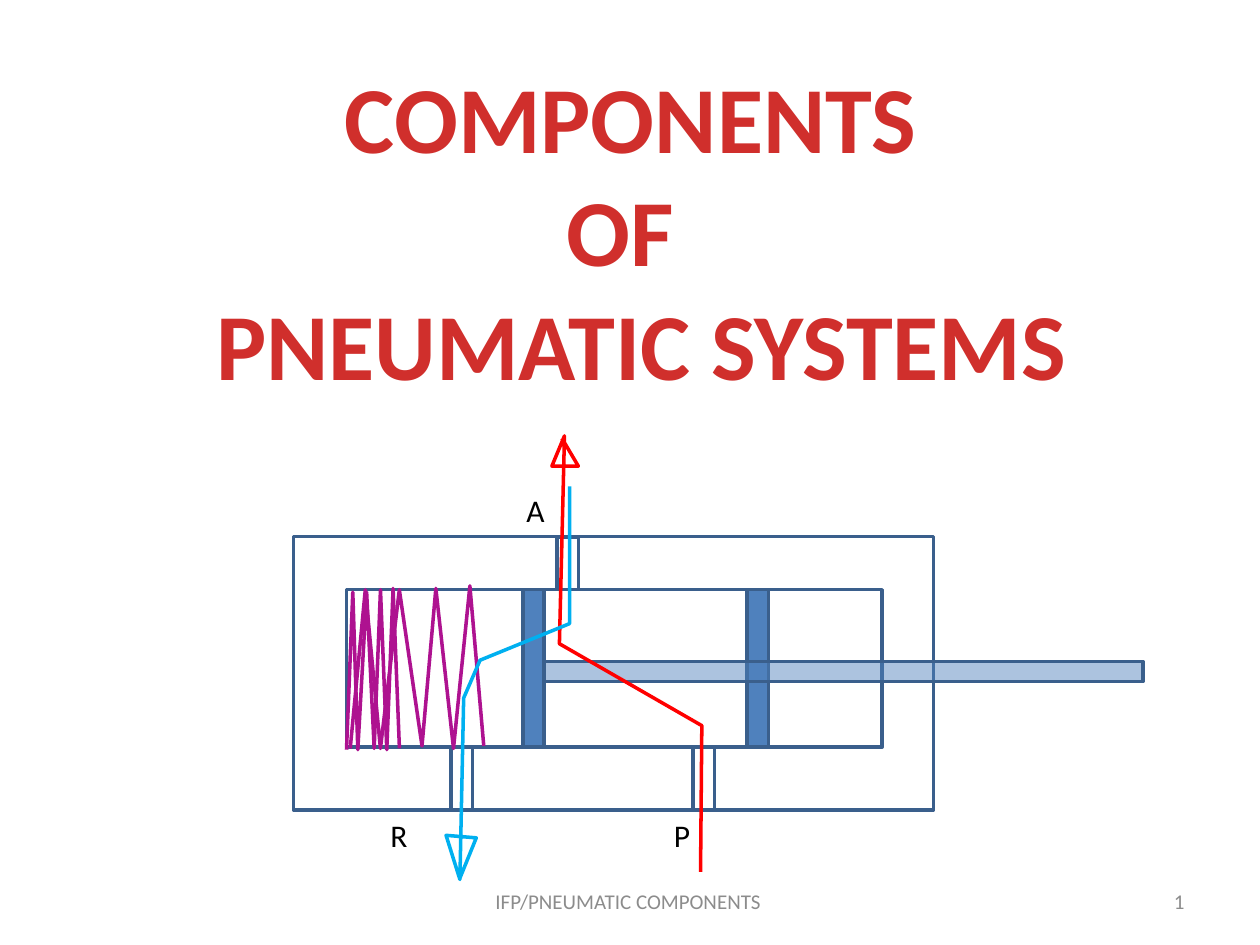
from dataclasses import dataclass

from lxml.etree import SubElement
from pptx import Presentation
from pptx.dml.color import RGBColor
from pptx.enum.shapes import MSO_SHAPE
from pptx.enum.text import MSO_ANCHOR, PP_ALIGN
from pptx.oxml.ns import qn
from pptx.util import Inches, Pt


@dataclass(frozen=True)
class Theme:
    font: str = "Calibri"
    title: str = "D02F2C"
    label: str = "000000"
    footer: str = "8C8C8C"
    outline: str = "3A5F8C"
    metal: str = "4F81BD"
    spring: str = "AE1290"
    supply: str = "FF0000"
    exhaust: str = "00B0F0"
    title_size: int = 54
    label_size: int = 18
    footer_size: int = 12
    line_width: int = 2
    rod_opacity: int = 47


THEME = Theme()

SPRING_RELAXED = [(2.78, 5.94), (2.9, 4.68), (3.02, 5.94), (3.17, 4.68), (3.35, 5.92),
                  (3.46, 4.67), (3.6, 5.94), (3.73, 4.65), (3.84, 5.92)]
SPRING_COMPRESSED = [(2.75, 5.95), (2.8, 4.7), (2.84, 5.95), (2.91, 4.7), (2.97, 5.94),
                     (3.02, 4.68), (3.07, 5.95), (3.12, 4.67), (3.17, 5.94)]
SUPPLY_FLOW = [(5.56, 6.92), (5.57, 5.76), (4.44, 5.11), (4.48, 3.46),
               (4.38, 3.7), (4.59, 3.7), (4.46, 3.48)]
EXHAUST_FLOW = [(4.52, 3.86), (4.52, 4.95), (3.81, 5.24), (3.68, 5.54), (3.65, 6.98),
                (3.54, 6.63), (3.78, 6.65), (3.65, 6.97)]


def add_text(page, place, lines, size, color, align=PP_ALIGN.LEFT,
             anchor=MSO_ANCHOR.TOP, bold=False, wrap=True):
    box = page.shapes.add_textbox(*map(Inches, place))
    frame = box.text_frame
    frame.word_wrap = wrap
    frame.vertical_anchor = anchor
    for index, line in enumerate(lines):
        para = frame.add_paragraph() if index else frame.paragraphs[0]
        para.alignment = align
        span = para.add_run()
        span.text = line
        span.font.name = THEME.font
        span.font.size = Pt(size)
        span.font.bold = bold
        span.font.color.rgb = RGBColor.from_string(color)


def set_outline(shape, color):
    shape.shadow.inherit = False
    shape.line.color.rgb = RGBColor.from_string(color)
    shape.line.width = Pt(THEME.line_width)


def add_block(page, place, fill=None, opacity=100):
    block = page.shapes.add_shape(MSO_SHAPE.RECTANGLE, *map(Inches, place))
    set_outline(block, THEME.outline)
    if fill is None:
        block.fill.background()
        return
    block.fill.solid()
    block.fill.fore_color.rgb = RGBColor.from_string(fill)
    if opacity < 100:
        color = block.fill._xPr.find(qn("a:solidFill"))[0]
        SubElement(color, qn("a:alpha"), val=str(opacity * 1000))


def add_trace(page, points, color):
    corners = [(Inches(x), Inches(y)) for x, y in points]
    builder = page.shapes.build_freeform(*corners[0])
    builder.add_line_segments(corners[1:], close=False)
    trace = builder.convert_to_shape()
    trace.fill.background()
    set_outline(trace, color)


def add_valve(page):
    chamber = (2.75, 4.68, 4.25, 1.25)
    body = (2.33, 4.26, 5.08, 2.17)
    outlet_port = (4.42, 4.26, 0.17, 0.42)
    for place in (chamber, body, outlet_port):
        add_block(page, place)
    for left in (3.58, 5.5):
        add_block(page, (left, 5.93, 0.17, 0.5))
    for left in (4.15, 5.93):
        add_block(page, (left, 4.68, 0.17, 1.25), THEME.metal)
    add_block(page, (4.32, 5.25, 4.75, 0.16), THEME.metal, THEME.rod_opacity)


def add_footer(page, place, text, align):
    add_text(page, place, [text], THEME.footer_size, THEME.footer, align, MSO_ANCHOR.MIDDLE)


def main():
    deck = Presentation()
    deck.slide_width, deck.slide_height = Inches(10), Inches(7.5)
    page = deck.slides.add_slide(deck.slide_layouts[6])

    add_text(page, (1.58, 0.42, 7.02, 2.83),
             ["COMPONENTS ", "OF  ", "PNEUMATIC SYSTEMS"],
             THEME.title_size, THEME.title, PP_ALIGN.CENTER, bold=True, wrap=False)
    add_valve(page)
    for letter, left, top, width in (("A", 4.08, 3.85, 0.67),
                                     ("P", 5.25, 6.43, 0.75),
                                     ("R", 3, 6.43, 0.5)):
        add_text(page, (left, top, width, 0.4), [letter], THEME.label_size, THEME.label)
    for points, color in ((SPRING_RELAXED, THEME.spring),
                          (SPRING_COMPRESSED, THEME.spring),
                          (SUPPLY_FLOW, THEME.supply),
                          (EXHAUST_FLOW, THEME.exhaust)):
        add_trace(page, points, color)
    add_footer(page, (3.42, 6.95, 3.17, 0.4), "IFP/PNEUMATIC COMPONENTS ", PP_ALIGN.CENTER)
    add_footer(page, (7.17, 6.95, 2.33, 0.4), "1", PP_ALIGN.RIGHT)

    deck.save("out.pptx")


if __name__ == "__main__":
    main()
